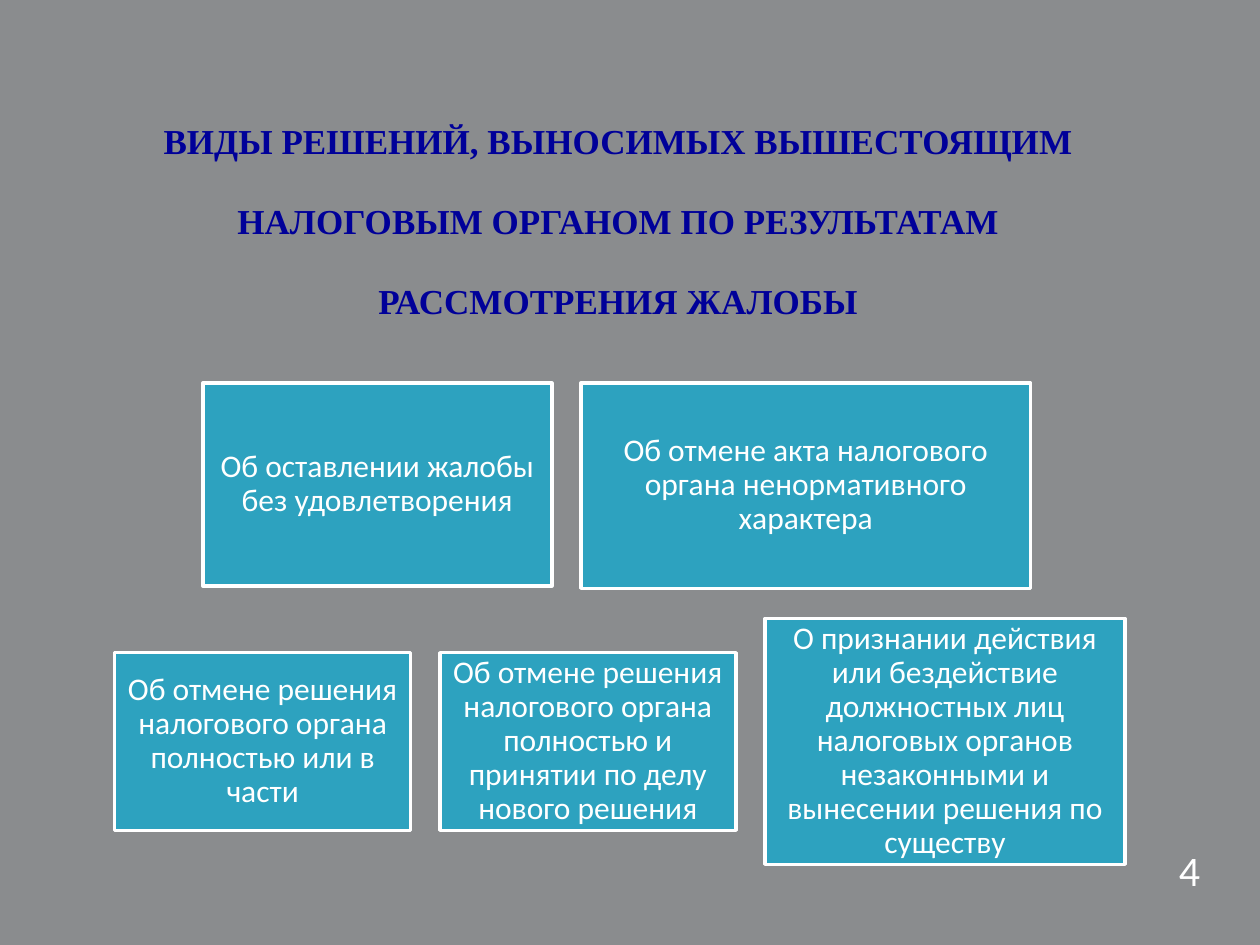
from pptx import Presentation
from pptx.dml.color import RGBColor
from pptx.enum.shapes import MSO_SHAPE
from pptx.enum.text import MSO_ANCHOR, MSO_AUTO_SIZE, PP_ALIGN
from pptx.util import Inches, Pt

GREY = RGBColor(0x8A, 0x8C, 0x8E)
NAVY = RGBColor(0x00, 0x00, 0x99)
TEAL = RGBColor(0x2D, 0xA2, 0xBF)
WHITE = RGBColor(0xFF, 0xFF, 0xFF)

GAP = 0.23
ROWS = [
    (1.61, [
        (3.04, 2.77, 1.61, "Об оставлении жалобы без удовлетворения"),
        (3.04, 3.57, 1.63, "Об отмене акта налогового органа ненормативного характера"),
    ]),
    (0.91, [
        (5.18, 2.35, 1.41, "Об отмене решения налогового органа полностью или в части"),
        (5.18, 2.35, 1.41, "Об отмене решения налогового органа полностью и принятии по делу нового решения"),
        (4.91, 2.86, 1.95, "О признании действия или бездействие должностных лиц налоговых органов "
                           "незаконными и вынесении решения по существу"),
    ]),
]


def set_text(tf, text, font, size, color, spacing, anchor=MSO_ANCHOR.MIDDLE, bold=False):
    tf.word_wrap = True
    tf.auto_size = MSO_AUTO_SIZE.NONE
    tf.vertical_anchor = anchor
    p = tf.paragraphs[0]
    p.text = text
    p.alignment = PP_ALIGN.CENTER
    p.line_spacing = spacing
    p.font.name = font
    p.font.size = Pt(size)
    p.font.bold = bold
    p.font.color.rgb = color


prs = Presentation()
prs.slide_width = Inches(10)
prs.slide_height = Inches(7.5)
s = prs.slides.add_slide(prs.slide_layouts[5])
s.background.fill.solid()
s.background.fill.fore_color.rgb = GREY

title = s.shapes.title
title.left, title.top = Inches(0.9), Inches(0.6)
title.width, title.height = Inches(8.01), Inches(1.97)
set_text(title.text_frame,
         "ВИДЫ РЕШЕНИЙ, ВЫНОСИМЫХ ВЫШЕСТОЯЩИМ НАЛОГОВЫМ ОРГАНОМ "
         "ПО РЕЗУЛЬТАТАМ РАССМОТРЕНИЯ ЖАЛОБЫ",
         "Times New Roman", 20, NAVY, Pt(45.6), MSO_ANCHOR.TOP, True)

number = s.shapes.add_textbox(Inches(9.1), Inches(6.61), Inches(0.68), Inches(0.69))
set_text(number.text_frame, "4", "Calibri", 24, WHITE, Pt(21))

for left, boxes in ROWS:
    for top, width, height, text in boxes:
        sp = s.shapes.add_shape(MSO_SHAPE.RECTANGLE, Inches(left), Inches(top),
                                Inches(width), Inches(height))
        sp.shadow.inherit = False
        sp.fill.solid()
        sp.fill.fore_color.rgb = TEAL
        sp.line.color.rgb = WHITE
        sp.line.width = Pt(2)
        tf = sp.text_frame
        tf.margin_left = tf.margin_right = Inches(0.07)
        tf.margin_top = tf.margin_bottom = Inches(0.07)
        set_text(tf, text, "Calibri", 18, WHITE, 0.9)
        left += width + GAP

prs.save("out.pptx")
